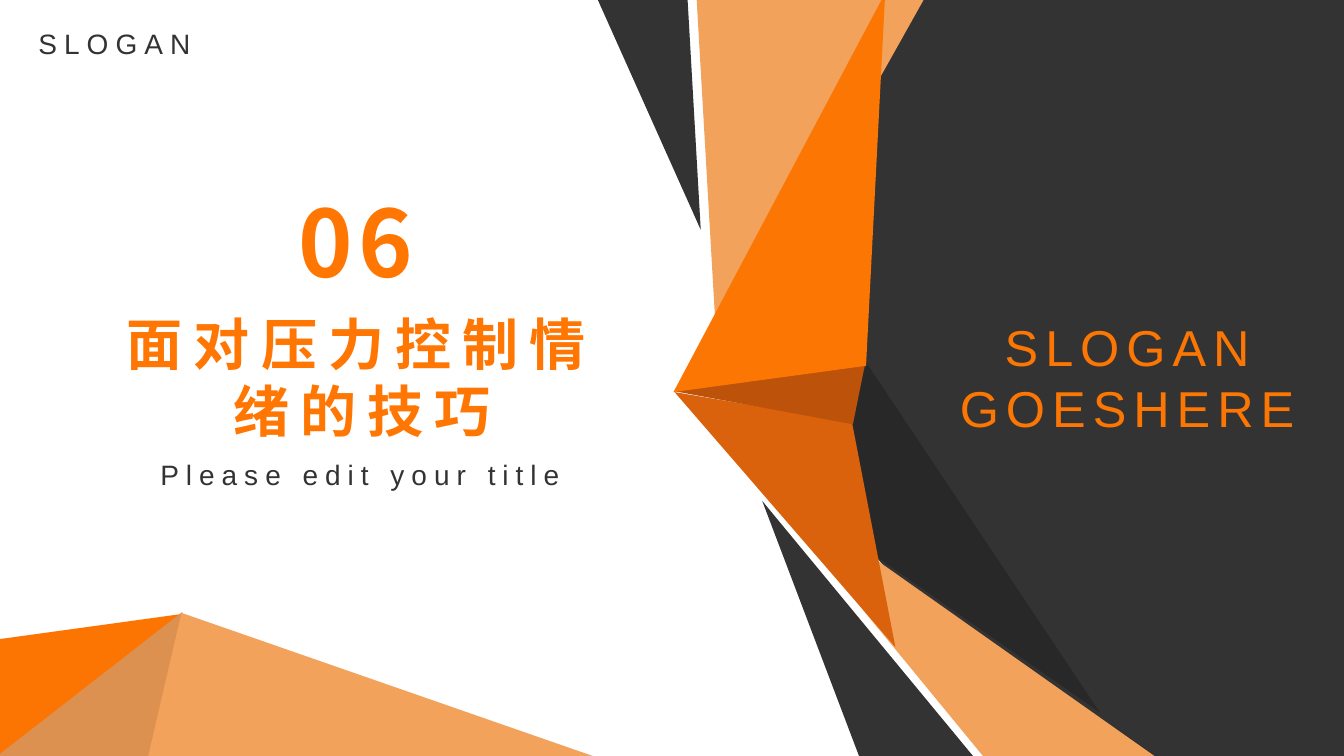
from lxml.etree import SubElement
from pptx import Presentation
from pptx.dml.color import RGBColor
from pptx.enum.text import MSO_ANCHOR, MSO_AUTO_SIZE, PP_ALIGN
from pptx.oxml.ns import qn
from pptx.util import Inches, Pt

ORANGE = RGBColor(0xFF, 0x76, 0x02)
FACET_ORANGE = RGBColor(0xFC, 0x76, 0x04)
CORNER_ORANGE = RGBColor(0xFC, 0x75, 0x03)
LIGHT_ORANGE = RGBColor(0xF2, 0xA2, 0x5B)
TAN = RGBColor(0xDC, 0x91, 0x50)
DEEP_ORANGE = RGBColor(0xDA, 0x62, 0x0C)
BROWN = RGBColor(0xBD, 0x52, 0x0A)
CHARCOAL = RGBColor(0x33, 0x33, 0x33)
BLACK = RGBColor(0x00, 0x00, 0x00)

LATIN_FONT = "Arial"
CHINESE_FONT = "Noto Sans CJK SC"

deck = Presentation()
deck.slide_width = Inches(13.33)
deck.slide_height = Inches(7.5)
page = deck.slides.add_slide(deck.slide_layouts[5])


def add_facet(points, color):
    corners = [(Inches(x), Inches(y)) for x, y in points]
    builder = page.shapes.build_freeform(*corners[0])
    builder.add_line_segments(corners[1:], close=True)
    facet = builder.convert_to_shape()
    facet.shadow.inherit = False
    facet.fill.solid()
    facet.fill.fore_color.rgb = color
    facet.line.fill.background()
    return facet


def write_text(box, place, lines, font_name, size, color, spacing, bold=False):
    box.left, box.top, box.width, box.height = [Inches(length) for length in place]
    frame = box.text_frame
    frame.word_wrap = True
    frame.auto_size = MSO_AUTO_SIZE.NONE
    frame.vertical_anchor = MSO_ANCHOR.TOP
    for index, line in enumerate(lines):
        para = frame.add_paragraph() if index else frame.paragraphs[0]
        para.alignment = PP_ALIGN.CENTER
        span = para.add_run()
        span.text = line
        span.font.size = Pt(size)
        span.font.bold = bold
        span.font.color.rgb = color
        span.font.name = font_name
        # Letter spacing and East Asian font
        properties = span._r.get_or_add_rPr()
        properties.set("spc", str(spacing * 100))
        SubElement(properties, qn("a:ea")).set("typeface", font_name)


# Faceted background, from back to front
facets = [
    # Dark right panel and the light band at its top
    ([(8.03, 0), (13.33, 0), (13.33, 7.5), (10.41, 7.5), (8.03, 4.77)], CHARCOAL),
    ([(6.91, 0), (7.12, 3.64), (9.16, 0)], LIGHT_ORANGE),
    # Bottom left corner
    ([(0, 6.34), (1.81, 6.09), (0, 7.5)], CORNER_ORANGE),
    ([(0, 7.48), (1.81, 6.07), (1.48, 7.5), (0, 7.5)], TAN),
    ([(1.47, 7.5), (1.8, 6.08), (5.88, 7.5)], LIGHT_ORANGE),
    # Bottom centre wedges
    ([(8.52, 7.5), (7.56, 4.97), (9.65, 7.5)], CHARCOAL),
    ([(9.75, 7.5), (7.41, 4.65), (11.45, 7.5)], LIGHT_ORANGE),
]
for points, color in facets:
    add_facet(points, color)

# Translucent shade on the dark panel
shade = add_facet([(8, 5.04), (8.6, 3.61), (10.91, 7.07)], BLACK)
shade_color = shade.fill._xPr.find(qn("a:solidFill"))[0]
SubElement(shade_color, qn("a:alpha")).set("val", "21000")

# Folded arrow pointing left, and the dark sliver above it
arrow_facets = [
    ([(8.88, 6.42), (6.69, 3.89), (8.45, 4.19)], DEEP_ORANGE),
    ([(8.46, 4.21), (6.68, 3.88), (8.58, 3.61)], BROWN),
    ([(8.59, 3.63), (6.68, 3.89), (8.78, -0.07)], FACET_ORANGE),
    ([(6.82, 0), (6.95, 2.28), (5.93, 0)], CHARCOAL),
]
for points, color in arrow_facets:
    add_facet(points, color)

# Section title
write_text(page.shapes.title, (1.06, 3.02, 5.06, 1.43), ["面对压力控制情绪的技巧"],
           CHINESE_FONT, 40, ORANGE, 8, bold=True)

# Section number, slogans and subtitle
labels = [
    ((2.73, 1.79, 1.59, 1.2), ["06"], CHINESE_FONT, 66, ORANGE, 4, True),
    ((9.03, 3.09, 4.3, 1.3), ["SLOGAN", "GOESHERE"], LATIN_FONT, 36, FACET_ORANGE, 5, False),
    ((0.22, 0.21, 1.83, 0.43), ["SLOGAN"], LATIN_FONT, 20, CHARCOAL, 5, False),
    ((1.21, 4.49, 4.72, 0.43), ["Please edit your title"], LATIN_FONT, 20, CHARCOAL, 5, False),
]
for place, *text_style in labels:
    write_text(page.shapes.add_textbox(0, 0, 0, 0), place, *text_style)

deck.save("out.pptx")
